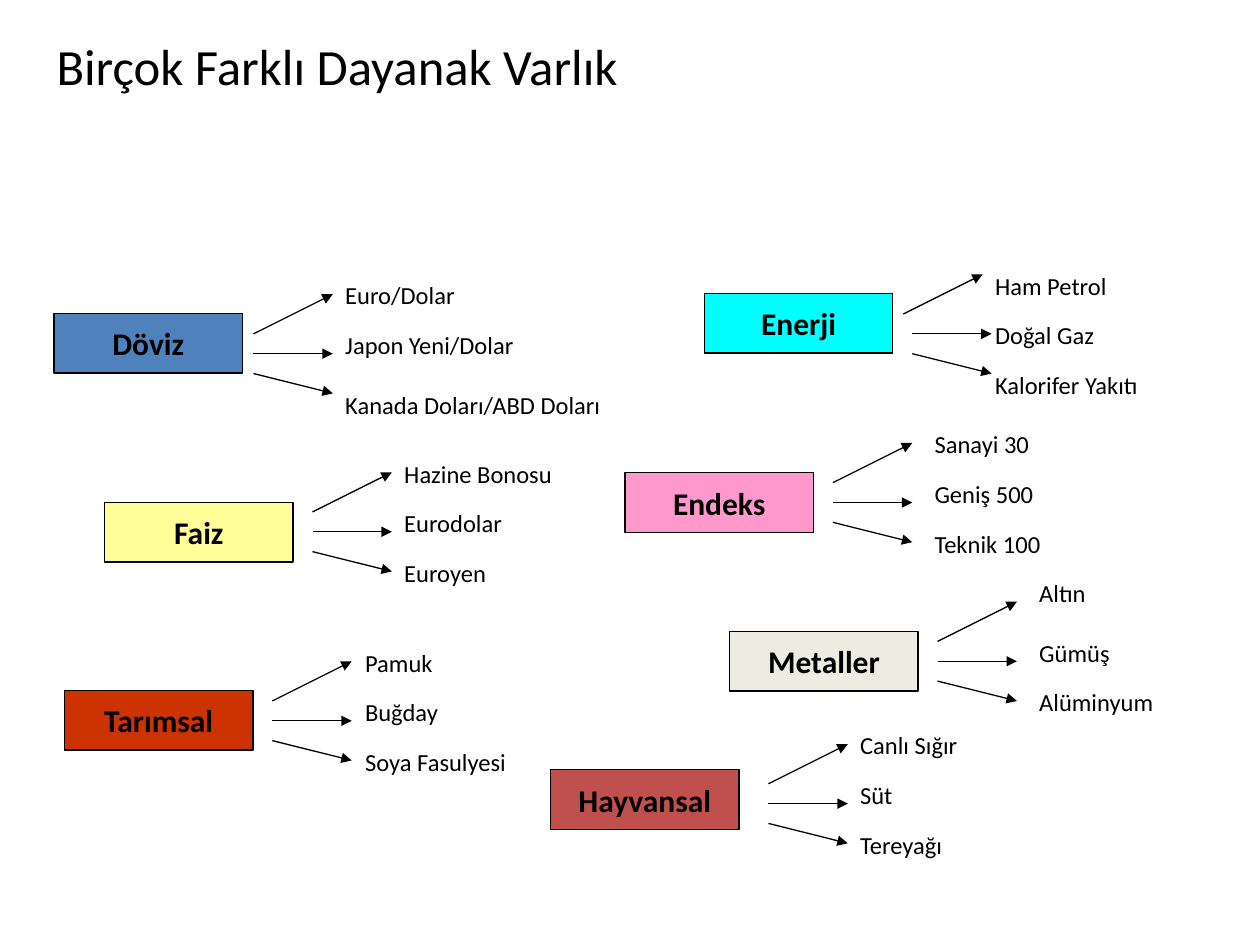
from lxml import etree
from pptx import Presentation
from pptx.dml.color import RGBColor
from pptx.enum import shapes, text
from pptx.oxml.ns import qn
from pptx.util import Cm, Pt

BLACK = RGBColor(0x00, 0x00, 0x00)
BLUE = RGBColor(0x4F, 0x81, 0xBD)
CYAN = RGBColor(0x00, 0xFF, 0xFF)
YELLOW = RGBColor(0xFF, 0xFF, 0x99)
PINK = RGBColor(0xFF, 0x99, 0xCC)
RUST = RGBColor(0xCC, 0x33, 0x00)
CREAM = RGBColor(0xEE, 0xEC, 0xE1)
RED = RGBColor(0xC0, 0x50, 0x4D)

TITLE = {"name": "Calibri", "size": Pt(29)}
HEAD = {"name": "Calibri", "size": Pt(18), "bold": True}
ITEM = {"name": "Calibri", "size": Pt(14)}

RISES = [(-0.4, -1.2), (0, 0), (0.4, 0.8)]
STEPS = (-1.6, -0.6, 0.4)

# name, fill, box corner, arrow start and middle, label left, label tops, items
GROUPS = [
    ("Döviz", BLUE, (1.09, 6.32), (5.11, 7.13), 6.71, (-1.6, -0.6, 0.6),
     [("Euro/Dolar", 5), ("Japon Yeni/Dolar", 6.4),
      ("Kanada Doları/ABD Doları", 6.6)]),
    ("Enerji", CYAN, (14.2, 5.92), (18.39, 6.73), 19.81, (-1.4, -0.4, 0.6),
     [("Ham Petrol", 3.4), ("Doğal Gaz", 3.4), ("Kalorifer Yakıtı", 3.8)]),
    ("Faiz", YELLOW, (2.11, 10.13), (6.3, 10.72), 7.9, STEPS,
     [("Hazine Bonosu", 5), ("Eurodolar", 6.4), ("Euroyen", 6.6)]),
    ("Endeks", PINK, (12.6, 9.53), (16.79, 10.13), 18.59, STEPS,
     [("Sanayi 30", 5), ("Geniş 500", 3.8), ("Teknik 100", 3.8)]),
    ("Tarımsal", RUST, (1.3, 13.92), (5.49, 14.53), 7.11, STEPS,
     [("Pamuk", 2.4), ("Buğday", 3.2), ("Soya Fasulyesi", 4.4)]),
    ("Metaller", CREAM, (14.71, 12.73), (18.9, 13.33), 20.7,
     (-1.8, -0.6, 0.4),
     [("Altın", 1.9), ("Gümüş", 3.8), ("Alüminyum", 3.8)]),
    ("Hayvansal", RED, (11.1, 15.52), (15.49, 16.2), 17.09, STEPS,
     [("Canlı Sığır", 5), ("Süt", 3.2), ("Tereyağı", 4.4)]),
]


def write(frame, words, style, align):
    para = frame.paragraphs[0]
    para.alignment = align
    run = para.add_run()
    run.text = words
    for key, value in style.items():
        setattr(run.font, key, value)
    run.font.color.rgb = BLACK


def add_text(slide, words, area, style, align=text.PP_ALIGN.LEFT):
    frame = slide.shapes.add_textbox(*map(Cm, area)).text_frame
    frame.word_wrap = True
    write(frame, words, style, align)
    return frame


def add_label(slide, words, left, top, width):
    frame = add_text(slide, words, (left, top, width, 0.85), ITEM)
    frame.auto_size = text.MSO_AUTO_SIZE.SHAPE_TO_FIT_TEXT


def add_box(slide, words, fill, left, top):
    box = slide.shapes.add_shape(
        shapes.MSO_SHAPE.RECTANGLE, Cm(left), Cm(top), Cm(3.8), Cm(1.2))
    box.shadow.inherit = False
    box.fill.solid()
    box.fill.fore_color.rgb = fill
    box.line.color.rgb = BLACK
    box.line.width = Pt(0.75)
    frame = box.text_frame
    frame.word_wrap = False
    frame.vertical_anchor = text.MSO_ANCHOR.MIDDLE
    write(frame, words, HEAD, text.PP_ALIGN.CENTER)


def add_arrow(slide, left, start, end):
    arrow = slide.shapes.add_connector(
        shapes.MSO_CONNECTOR.STRAIGHT,
        Cm(left), Cm(start), Cm(left + 1.6), Cm(end))
    arrow.line.color.rgb = BLACK
    arrow.line.width = Pt(0.75)
    etree.SubElement(arrow.line._get_or_add_ln(), qn("a:tailEnd"),
                     type="triangle")
    etree.SubElement(arrow._element.spPr, qn("a:effectLst"))


def add_group(slide, name, fill, corner, start, left, tops, items):
    add_box(slide, name, fill, *corner)
    x, mid = start
    for i, (rise, top, (words, width)) in enumerate(zip(RISES, tops, items)):
        shift = 0.18 if name == "Enerji" and i == 0 else 0
        add_arrow(slide, x - shift, mid + rise[0], mid + rise[1])
        add_label(slide, words, left, mid + top, width)


def main():
    deck = Presentation()
    deck.slide_width, deck.slide_height = Cm(25.4), Cm(19.05)
    slide = deck.slides.add_slide(deck.slide_layouts[6])
    add_text(slide, "Birçok Farklı Dayanak Varlık", (-2.39, 0.58, 18.39, 2.18),
             TITLE, text.PP_ALIGN.CENTER)
    for group in GROUPS:
        add_group(slide, *group)
    deck.save("out.pptx")


if __name__ == "__main__":
    main()
